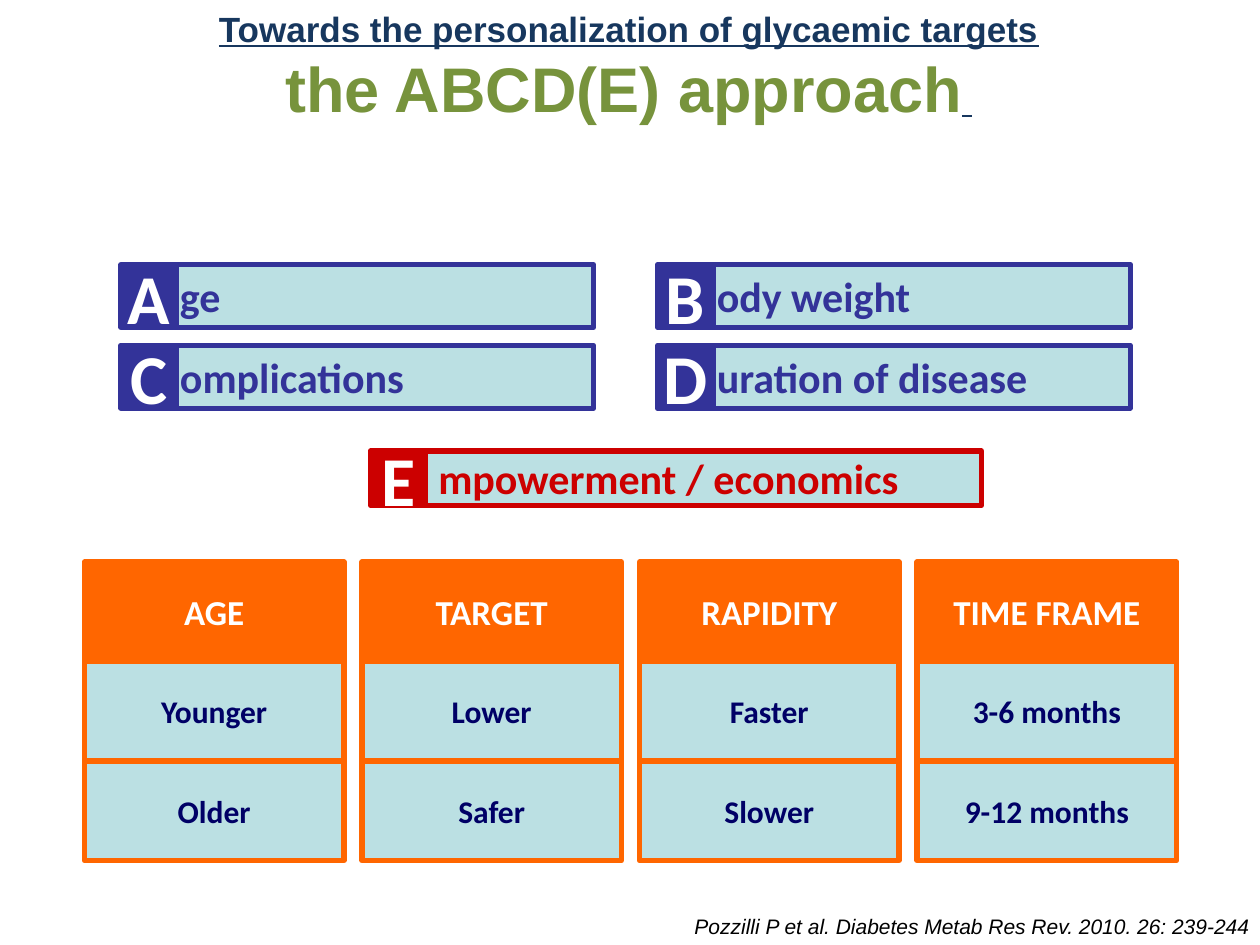
"""Build the ABCD(E) slide on personalised glycaemic targets."""
import pptx
import pptx.dml.color
import pptx.enum.shapes
import pptx.enum.text
import pptx.util

ALIGN = pptx.enum.text.PP_ALIGN
ANCHOR = pptx.enum.text.MSO_ANCHOR
AUTO = pptx.enum.text.MSO_AUTO_SIZE
RECT = pptx.enum.shapes.MSO_SHAPE.RECTANGLE
Inches = pptx.util.Inches

THEME = {
    "pale": "BBE0E3", "blue": "333399", "red": "CC0000", "orange": "FF6600",
    "navy": "000066", "white": "FFFFFF", "black": "000000",
    "title": "17375E", "green": "77933C",
    "head": "Arial", "body": "Calibri", "line": 3,
    "note": 12, "cell": 18, "column": 20, "word": 24, "approach": 36, "letter": 40,
}

TITLE = [
    [("Towards the personalization of glycaemic targets", "column", "title", True)],
    [("the ABCD(E) approach", "approach", "green", False),
     (" ", "column", "title", True)],
]
FACTORS = [
    [("A", "ge"), ("B", "ody weight")],
    [("C", "omplications"), ("D", "uration of disease")],
]
EXTRA = ("E", "mpowerment / economics")
TARGETS = [
    ["AGE", "TARGET", "RAPIDITY", "TIME FRAME"],
    ["Younger", "Lower", "Faster", "3-6 months"],
    ["Older", "Safer", "Slower", "9-12 months"],
]
SOURCE = "Pozzilli P et al. Diabetes Metab Res Rev. 2010. 26: 239-244"

FACTOR_GRID = {"left": 0.96, "top": 2.1, "dx": 4.26, "dy": 0.64}
TARGET_GRID = {"left": 0.67, "top": 4.46, "dx": 2.203, "dy": 0.79}
LETTER_W = 0.44


def rgb(name):
    return pptx.dml.color.RGBColor.from_string(THEME[name])


def apply(obj, values):
    for name, value in values.items():
        setattr(obj, name, value)


def add_run(p, text, size, color, font="body", **style):
    r = p.add_run()
    r.text = text
    apply(r.font, {"name": THEME[font], "size": pptx.util.Pt(THEME[size]), **style})
    r.font.color.rgb = rgb(color)


def add_box(s, at, text, fill, line, size, color, align=ALIGN.CENTER):
    sp = s.shapes.add_shape(RECT, *map(Inches, at))
    sp.shadow.inherit = False
    sp.fill.solid()
    sp.fill.fore_color.rgb = rgb(fill)
    sp.line.color.rgb = rgb(line)
    sp.line.width = pptx.util.Pt(THEME["line"])
    tf = sp.text_frame
    apply(tf, {"word_wrap": False, "vertical_anchor": ANCHOR.MIDDLE})
    p = tf.paragraphs[0]
    p.alignment = align
    add_run(p, text, size, color, bold=True)


def add_factor(s, pair, left, top, offset, width, height, color):
    letter, word = pair
    add_box(s, (left + offset, top, width, height), word, "pale", color,
            "word", color, ALIGN.LEFT)
    add_box(s, (left, top, LETTER_W, height), letter, color, color, "letter", "white")


def cells(rows, grid):
    for i, row in enumerate(rows):
        for j, item in enumerate(row):
            yield i, item, grid["left"] + j * grid["dx"], grid["top"] + i * grid["dy"]


def add_title(s):
    sp = s.shapes.title
    apply(sp, {"left": Inches(1.61), "top": Inches(0.01),
               "width": Inches(6.76), "height": Inches(1.04)})
    tf = sp.text_frame
    apply(tf, {"word_wrap": False, "auto_size": AUTO.SHAPE_TO_FIT_TEXT,
               "vertical_anchor": ANCHOR.TOP})
    for i, runs in enumerate(TITLE):
        p = tf.add_paragraph() if i else tf.paragraphs[0]
        p.alignment = ALIGN.CENTER
        for text, size, color, underline in runs:
            add_run(p, text, size, color, "head", bold=True, underline=underline)


def add_source(s):
    sp = s.shapes.add_textbox(*map(Inches, (4.99, 7.2, 5.03, 0.3)))
    tf = sp.text_frame
    apply(tf, {"word_wrap": True, "auto_size": AUTO.SHAPE_TO_FIT_TEXT})
    p = tf.paragraphs[0]
    p.alignment = ALIGN.RIGHT
    add_run(p, SOURCE, "note", "black", "head", italic=True)


def main():
    prs = pptx.Presentation()
    apply(prs, {"slide_width": Inches(10), "slide_height": Inches(7.5)})
    s = prs.slides.add_slide(prs.slide_layouts[5])
    add_title(s)
    for _, pair, left, top in cells(FACTORS, FACTOR_GRID):
        add_factor(s, pair, left, top, 0.37, 3.38, 0.5, "blue")
    add_factor(s, EXTRA, 2.94, 3.58, LETTER_W, 4.41, 0.43, "red")
    for row, text, left, top in cells(TARGETS, TARGET_GRID):
        look = ("pale", "orange", "cell", "navy") if row else (
            "orange", "orange", "column", "white")
        add_box(s, (left, top, 2.06, TARGET_GRID["dy"]), text, *look)
    add_source(s)
    prs.save("out.pptx")


if __name__ == "__main__":
    main()
